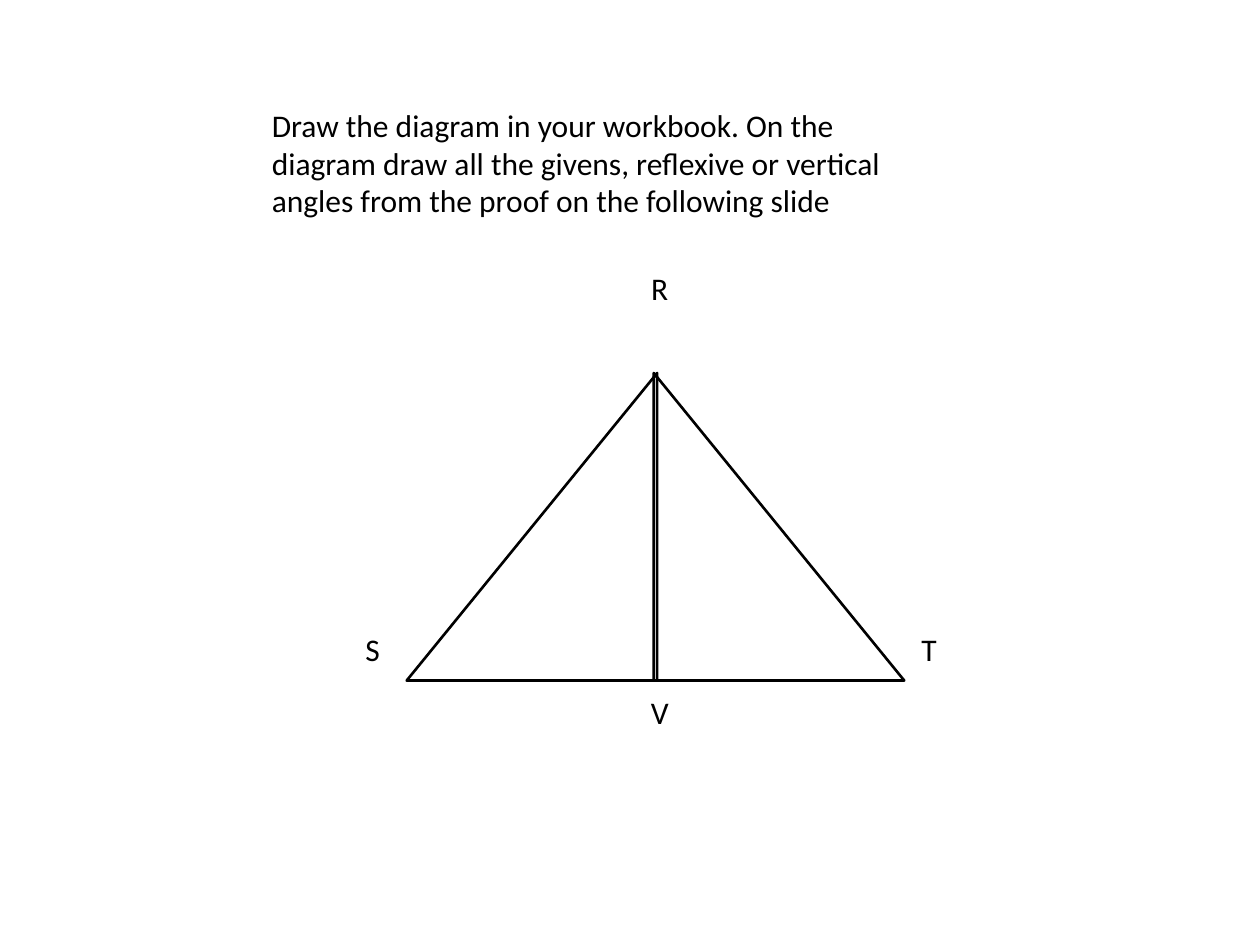
from pptx import Presentation
from pptx import util as u
from pptx.dml.color import RGBColor
from pptx.enum import shapes, text


def color(hex_code):
    return RGBColor.from_string(hex_code)


def write(frame, words, *, font="Calibri", size=18, ink="000000",
          align=text.PP_ALIGN.LEFT):
    """Put one formatted paragraph into a text frame."""
    frame.word_wrap = True
    paragraph = frame.paragraphs[0]
    paragraph.alignment = align
    run = paragraph.add_run()
    run.text = words
    run.font.name = font
    run.font.size = u.Pt(size)
    run.font.color.rgb = color(ink)


class GeometrySlide:
    ink = "000000"
    outline = 1.5
    label_width, label_height = 2.31, 2.34
    label_inset = 0.25

    def __init__(self, slide):
        self.slide = slide
        self.diagram = slide.shapes.add_group_shape()

    def right_triangle(self, left, top, width, height, mirrored=False):
        half = self.diagram.shapes.add_shape(
            shapes.MSO_SHAPE.RIGHT_TRIANGLE,
            u.Cm(left), u.Cm(top), u.Cm(width), u.Cm(height))
        half.shadow.inherit = False
        half.fill.background()
        half.line.color.rgb = color(self.ink)
        half.line.width = u.Pt(self.outline)
        if mirrored:
            half._element.spPr.xfrm.set("flipH", "1")

    def vertex(self, letter, center, top):
        label = self.diagram.shapes.add_textbox(
            u.Cm(center - self.label_width / 2), u.Cm(top),
            u.Cm(self.label_width), u.Cm(self.label_height))
        frame = label.text_frame
        frame.margin_left = frame.margin_right = u.Cm(self.label_inset)
        frame.margin_top = frame.margin_bottom = u.Cm(self.label_inset)
        write(frame, letter, ink=self.ink, align=text.PP_ALIGN.CENTER)

    def instruction(self, words, left, top, width, height):
        box = self.slide.shapes.add_textbox(
            u.Cm(left), u.Cm(top), u.Cm(width), u.Cm(height))
        write(box.text_frame, words, ink=self.ink)
        box.text_frame.auto_size = text.MSO_AUTO_SIZE.SHAPE_TO_FIT_TEXT


def main():
    deck = Presentation()
    deck.slide_width, deck.slide_height = u.Cm(25.4), u.Cm(19.05)
    page = GeometrySlide(deck.slides.add_slide(deck.slide_layouts[6]))

    apex, half_width, height = 7.52, 5.05, 6.2
    base = apex + height
    left_half, right_half = 8.2, 13.18
    page.right_triangle(right_half, apex, half_width, height)
    page.right_triangle(left_half, apex, half_width, height, mirrored=True)

    middle, corner_top = 13.3, 12.45
    page.vertex("R", middle, apex - page.label_height)
    page.vertex("S", 7.51, corner_top)
    page.vertex("T", 18.73, corner_top)
    page.vertex("V", middle, base)

    page.instruction(
        "Draw the diagram in your workbook. On the diagram draw all the "
        "givens, reflexive or vertical angles from the proof on the "
        "following slide", 5.23, 2.01, 13.82, 2.57)
    deck.save("out.pptx")


if __name__ == "__main__":
    main()
